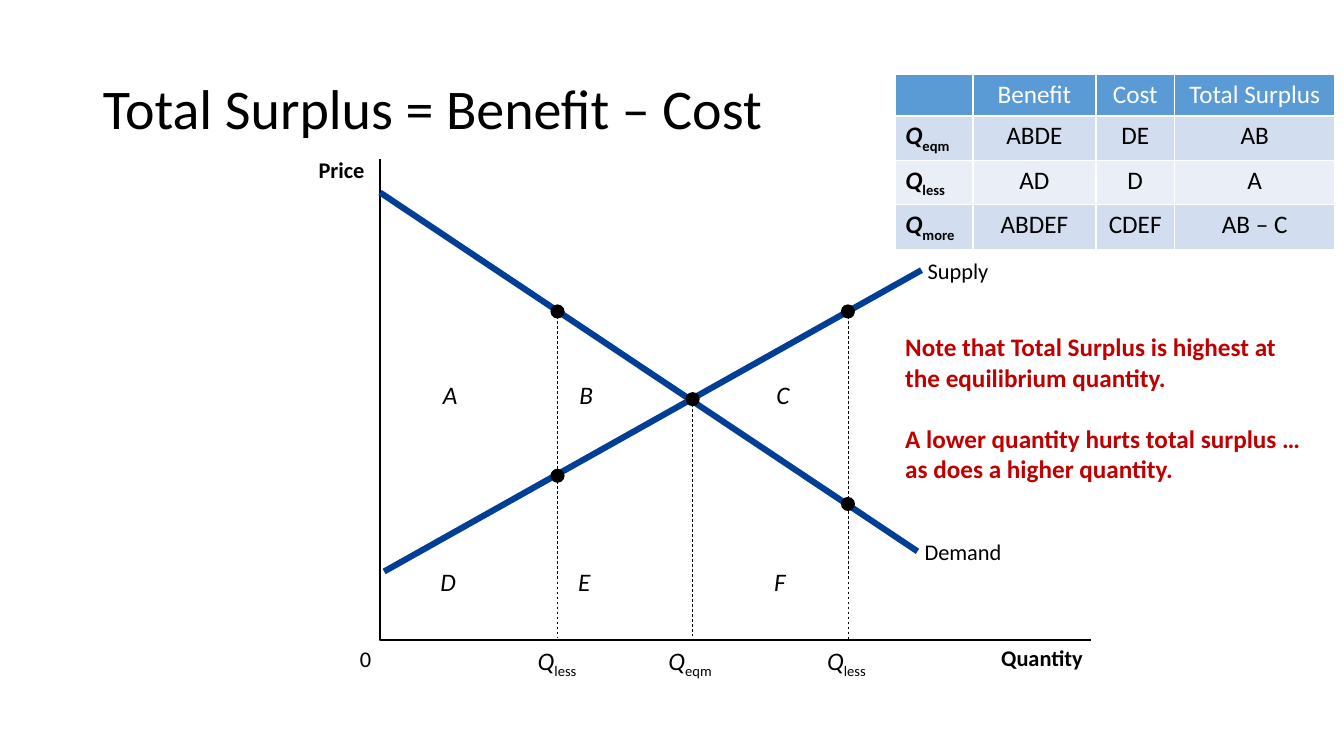
"""Build a slide showing total surplus on a supply and demand diagram."""
from lxml.etree import SubElement
from pptx import Presentation
from pptx.dml.color import RGBColor
from pptx.enum.dml import MSO_LINE
from pptx.enum.shapes import MSO_CONNECTOR as LINK, MSO_SHAPE as SHAPE
from pptx.enum.text import MSO_ANCHOR as ANCHOR, MSO_AUTO_SIZE as FIT, PP_ALIGN as ALIGN
from pptx.oxml.ns import qn
from pptx.util import Pt

PX = 9144
BLACK, WHITE, NAVY, RED = "000000", "FFFFFF", "003F95", "C00000"
HEADER, BAND_DARK, BAND_LIGHT = "5B9BD5", "D2DEEF", "EAEFF7"


def write(frame, text, size=18, color=BLACK, bold=False, italic=False, align=ALIGN.LEFT,
          gap=0, inset=None, wrap=True):
    """Fill a text frame; an underscore starts a subscript and a newline a paragraph."""
    frame.word_wrap = wrap
    if inset is not None:
        frame.margin_left = frame.margin_right = frame.margin_top = frame.margin_bottom = inset
    for number, line in enumerate(text.split("\n")):
        paragraph = frame.add_paragraph() if number else frame.paragraphs[0]
        paragraph.alignment = align
        if number:
            paragraph.space_before = Pt(gap)
        for part, words in enumerate(line.split("_")):
            run = paragraph.add_run()
            run.text = words
            run.font.name, run.font.size = "Calibri", Pt(size)
            run.font.bold, run.font.italic = bold, italic and not part
            run.font.color.rgb = RGBColor.from_string(color)
            if part:
                run.font._element.set("baseline", "-25000")


def draw_line(shapes, ends, color, width, dash=None):
    """Draw a straight line without a shadow."""
    line = shapes.add_connector(LINK.STRAIGHT, *[end * PX for end in ends])
    line.line.color.rgb = RGBColor.from_string(color)
    line.line.width = Pt(width)
    if dash:
        line.line.dash_style = dash
    SubElement(line._element.spPr, qn("a:effectLst"))


deck = Presentation()
deck.slide_width, deck.slide_height = 1333 * PX, 750 * PX
slide = deck.slides.add_slide(deck.slide_layouts[5])
shapes = slide.shapes

title = shapes.title
title.left, title.top, title.width, title.height = 92 * PX, 40 * PX, 1150 * PX, 145 * PX
write(title.text_frame, "Total Surplus = Benefit – Cost", size=40)
title.text_frame.auto_size = FIT.NONE
title.text_frame.vertical_anchor = ANCHOR.MIDDLE
title.text_frame.paragraphs[0].line_spacing = 0.8

outline = shapes.build_freeform(377, 158, scale=PX)
outline.add_line_segments([(377, 635), (1082, 635)], close=False)
axes = outline.convert_to_shape()
axes.shadow.inherit = False
axes.fill.background()
axes.line.color.rgb = RGBColor.from_string(BLACK)
axes.line.width = Pt(1.5)

for text, left, top, width, bold in [
    ("Quantity", 993, 639, 82, True),
    ("0", 357, 640, 11, False),
    ("Price", 316, 155, 46, True),
]:
    axis_label = shapes.add_textbox(left * PX, top * PX, width * PX, 27 * PX)
    write(axis_label.text_frame, text, size=16, bold=bold, inset=0, wrap=False)

for text, ends, left, top, width in [
    ("Demand", (377, 191, 910, 547), 917, 534, 77),
    ("Supply", (914, 268, 381, 567), 920, 255, 61),
]:
    curve = shapes.add_group_shape()
    draw_line(curve.shapes, ends, NAVY, 4.38)
    curve_label = curve.shapes.add_textbox(left * PX, top * PX, width * PX, 27 * PX)
    write(curve_label.text_frame, text, size=16, inset=0, wrap=False)

for quantity, x, label_left, heights, bottom in [
    ("Q_less", 553, 503, (309, 472), 632),
    ("Q_eqm", 687, 635, (396,), 631),
    ("Q_less", 841, 790, (309, 500), 636),
]:
    draw_line(shapes, (x, heights[0] + 5, x, bottom), BLACK, 0.5, MSO_LINE.DASH)
    for y in heights:
        dot = shapes.add_shape(SHAPE.OVAL, (x - 7) * PX, (y - 7) * PX, 14 * PX, 14 * PX)
        dot.shadow.inherit = False
        dot.fill.solid()
        dot.fill.fore_color.rgb = RGBColor.from_string(BLACK)
        dot.line.fill.background()
    tick = shapes.add_textbox(label_left * PX, 635 * PX, 99 * PX, 40 * PX)
    write(tick.text_frame, quantity, italic=True, align=ALIGN.CENTER)

for top, areas in [
    (371, [("A", 424), ("B", 559), ("C", 754)]),
    (557, [("D", 422), ("E", 557), ("F", 751)]),
]:
    for letter, left in areas:
        area = shapes.add_textbox(left * PX, top * PX, 45 * PX, 40 * PX)
        write(area.text_frame, letter, italic=True, align=ALIGN.CENTER)

surplus_rows = [
    ("", "Benefit", "Cost", "Total Surplus"),
    ("Q_eqm", "ABDE", "DE", "AB"),
    ("Q_less", "AD", "D", "A"),
    ("Q_more", "ABDEF", "CDEF", "AB – C"),
]
surplus = shapes.add_table(4, 4, 888 * PX, 74 * PX, 436 * PX, 164 * PX).table
for column, width in zip(surplus.columns, (77, 122, 78, 159)):
    column.width = width * PX
fills = (HEADER, BAND_DARK, BAND_LIGHT, BAND_DARK)
for r, (row, fill) in enumerate(zip(surplus_rows, fills)):
    for c, text in enumerate(row):
        cell = surplus.cell(r, c)
        cell.fill.solid()
        cell.fill.fore_color.rgb = RGBColor.from_string(fill)
        if text:
            write(cell.text_frame, text, color=BLACK if r else WHITE, bold=c == 0,
                  italic=c == 0, align=ALIGN.CENTER if c else ALIGN.LEFT)

note = shapes.add_textbox(888 * PX, 324 * PX, 422 * PX, 162 * PX)
write(note.text_frame, "Note that Total Surplus is highest at the equilibrium quantity.\n"
      "A lower quantity hurts total surplus … as does a higher quantity.",
      color=RED, bold=True, gap=22)

deck.save("out.pptx")
